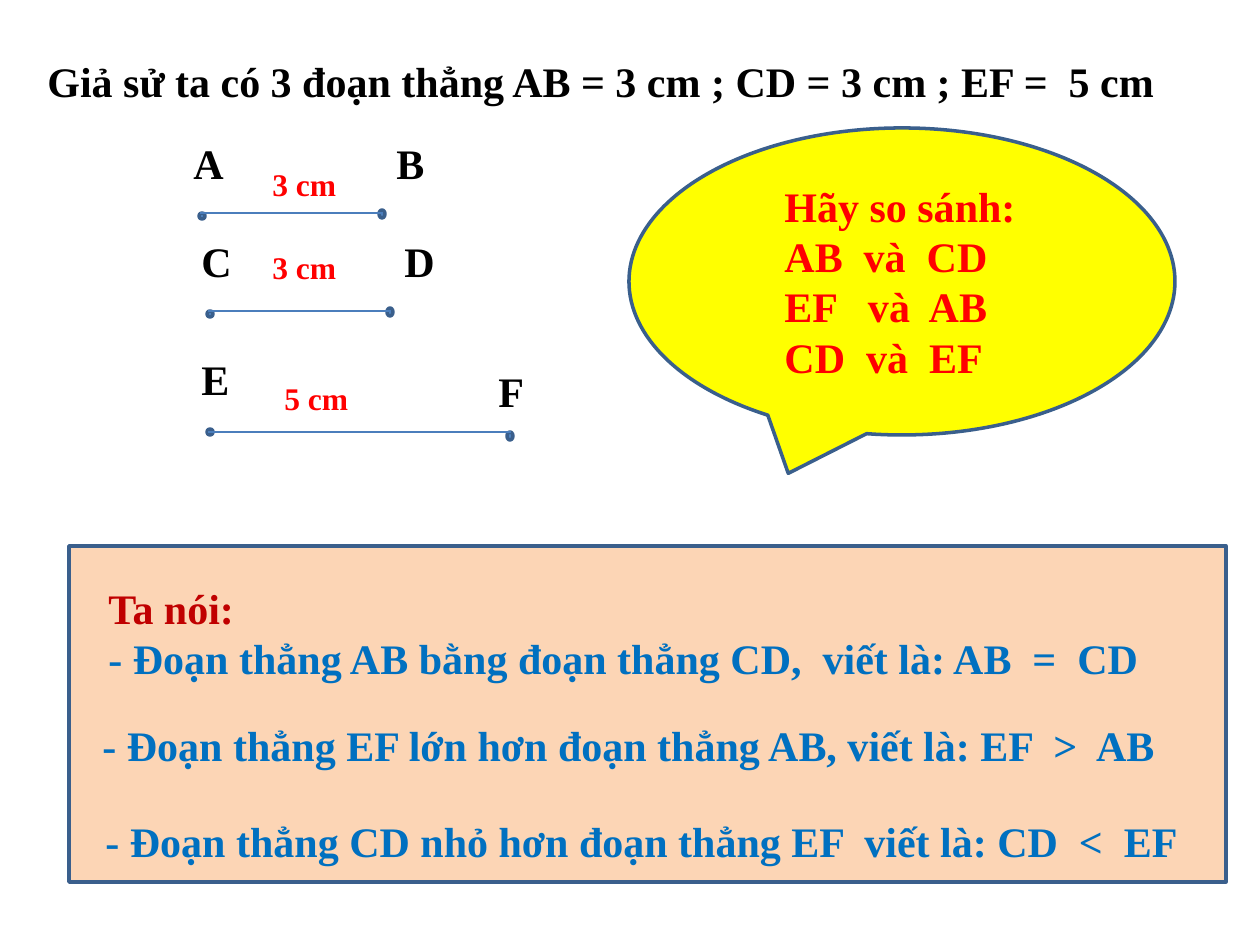
from dataclasses import dataclass

from lxml import etree
from pptx import Presentation
from pptx.dml.color import RGBColor
from pptx.enum.shapes import MSO_CONNECTOR, MSO_SHAPE
from pptx.enum.text import MSO_AUTO_SIZE
from pptx.oxml.ns import qn
from pptx.util import Emu, Pt

STRAIGHT = MSO_CONNECTOR.STRAIGHT
DOT = MSO_SHAPE.FLOWCHART_CONNECTOR
RECTANGLE = MSO_SHAPE.RECTANGLE
CALLOUT = MSO_SHAPE.OVAL_CALLOUT
FIT_SHAPE = MSO_AUTO_SIZE.SHAPE_TO_FIT_TEXT

EMU_PER_PX = 914400 / 126
FONT = "Times New Roman"
BLACK, RED, DARK_RED, BLUE = "000000", "FF0000", "C00000", "0070C0"
YELLOW, PEACH = "FFFF00", "FCD5B5"
DOT_FILL, OUTLINE, SEGMENT_LINE = "4F81BD", "3A5F8C", "4B7EBC"
DOT_WIDTH = 6
LABEL_HEIGHT, LENGTH_HEIGHT = 63, 50


@dataclass(frozen=True)
class Box:
    left: int
    top: int
    width: int
    height: int


@dataclass(frozen=True)
class Line:
    text: str
    color: str


@dataclass(frozen=True)
class Endpoint:
    name: str
    label: Box
    dot: Box


@dataclass(frozen=True)
class Segment:
    start: Endpoint
    end: Endpoint
    line_y: int
    length: str
    length_box: Box


def px(value: int) -> Emu:
    return Emu(round(value * EMU_PER_PX))


def rgb(value: str) -> RGBColor:
    return RGBColor.from_string(value)


def place(box: Box) -> tuple:
    return px(box.left), px(box.top), px(box.width), px(box.height)


def add_text(page, box: Box, lines: list[Line], size: int = 24, wrap: bool = False) -> None:
    frame = page.shapes.add_textbox(*place(box)).text_frame
    frame.text = "\n".join(line.text for line in lines)
    frame.word_wrap = wrap
    frame.auto_size = FIT_SHAPE
    for para, line in zip(frame.paragraphs, lines):
        for span in para.runs:
            span.font.name = FONT
            span.font.size = Pt(size)
            span.font.bold = True
            span.font.color.rgb = rgb(line.color)


def add_outlined(page, kind, box: Box, fill: str) -> None:
    shape = page.shapes.add_shape(kind, *place(box))
    shape.shadow.inherit = False
    shape.fill.solid()
    shape.fill.fore_color.rgb = rgb(fill)
    shape.line.color.rgb = rgb(OUTLINE)
    shape.line.width = Pt(2)


def add_segment(page, segment: Segment) -> None:
    for point in (segment.start, segment.end):
        add_outlined(page, DOT, point.dot, DOT_FILL)
        add_text(page, point.label, [Line(point.name, BLACK)], wrap=True)
    line = page.shapes.add_connector(
        STRAIGHT,
        px(segment.start.dot.left + 1), px(segment.line_y),
        px(segment.end.dot.left + 4), px(segment.line_y),
    )
    line.line.color.rgb = rgb(SEGMENT_LINE)
    line.line.width = Pt(0.75)
    etree.SubElement(line._element.spPr, qn("a:effectLst"))
    add_text(page, segment.length_box, [Line(segment.length, RED)], size=18)


def endpoint(name: str, label: tuple[int, int, int], dot: tuple[int, int, int]) -> Endpoint:
    label_left, label_top, label_width = label
    dot_left, dot_top, dot_height = dot
    return Endpoint(
        name,
        Box(label_left, label_top, label_width, LABEL_HEIGHT),
        Box(dot_left, dot_top, DOT_WIDTH, dot_height),
    )


SEGMENTS = [
    Segment(endpoint("A", (181, 131, 57), (199, 213, 6)),
            endpoint("B", (384, 131, 49), (379, 210, 8)),
            213, "3 cm", Box(260, 159, 89, LENGTH_HEIGHT)),
    Segment(endpoint("C", (189, 229, 57), (207, 311, 6)),
            endpoint("D", (392, 229, 49), (387, 308, 8)),
            311, "3 cm", Box(260, 242, 89, LENGTH_HEIGHT)),
    Segment(endpoint("E", (189, 347, 57), (207, 429, 6)),
            endpoint("F", (486, 359, 52), (507, 432, 8)),
            432, "5 cm", Box(272, 373, 89, LENGTH_HEIGHT)),
]

COMPARISONS = ["Hãy so sánh:", "AB  và  CD", "EF   và  AB", "CD  và  EF"]

CONCLUSIONS = [
    (Box(96, 576, 1066, 115), [
        Line("Ta nói:", DARK_RED),
        Line("- Đoạn thẳng AB bằng đoạn thẳng CD,  viết là: AB  =  CD", BLUE),
    ]),
    (Box(90, 713, 1089, 63), [
        Line("- Đoạn thẳng EF lớn hơn đoạn thẳng AB, viết là: EF  >  AB", BLUE),
    ]),
    (Box(93, 809, 1109, 63), [
        Line("- Đoạn thẳng CD nhỏ hơn đoạn thẳng EF  viết là: CD  <  EF", BLUE),
    ]),
]


def main() -> None:
    deck = Presentation()
    deck.slide_width, deck.slide_height = px(1260), px(945)
    page = deck.slides.add_slide(deck.slide_layouts[6])

    title = "Giả sử ta có 3 đoạn thẳng AB = 3 cm ; CD = 3 cm ; EF =  5 cm"
    add_text(page, Box(35, 49, 1143, 63), [Line(title, BLACK)])

    for segment in SEGMENTS:
        add_segment(page, segment)

    add_outlined(page, RECTANGLE, Box(69, 546, 1157, 336), PEACH)
    for box, lines in CONCLUSIONS:
        add_text(page, box, lines)

    add_outlined(page, CALLOUT, Box(629, 128, 546, 307), YELLOW)
    add_text(page, Box(772, 174, 270, 217), [Line(text, RED) for text in COMPARISONS])

    deck.save("out.pptx")


if __name__ == "__main__":
    main()
